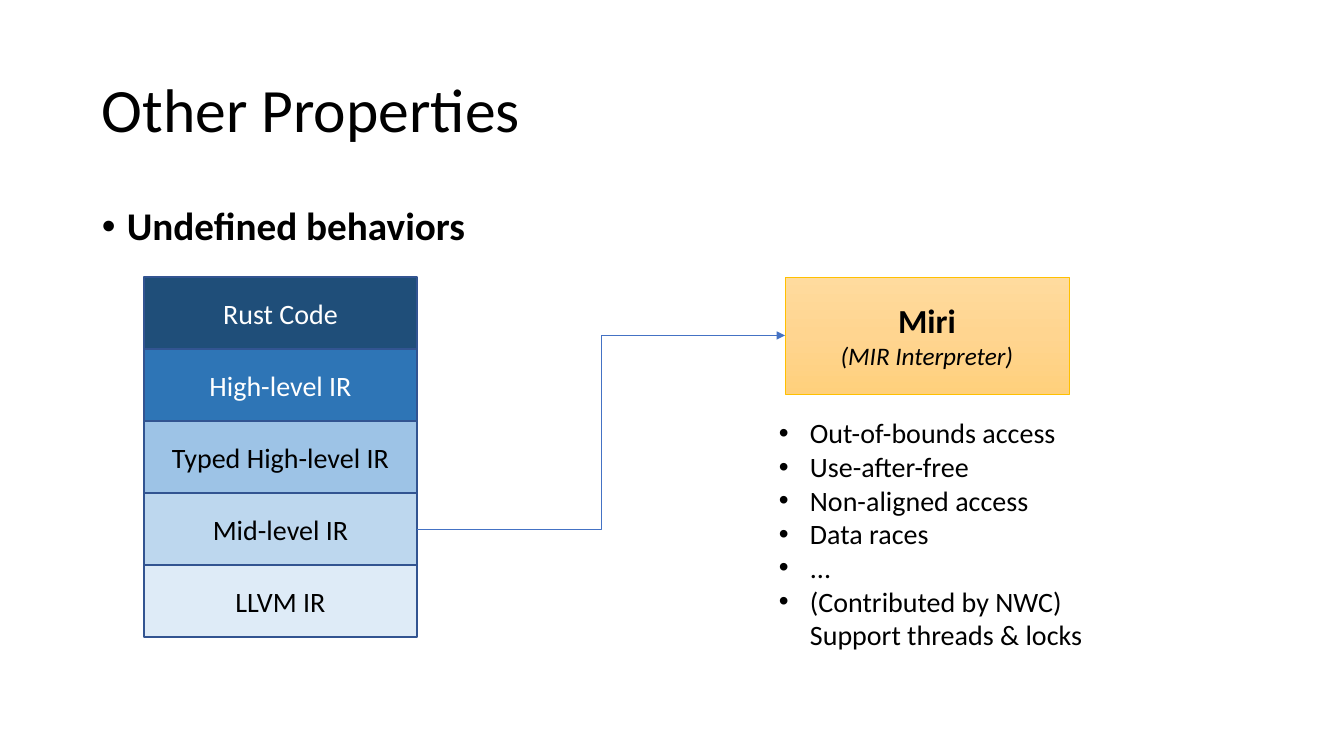
from copy import deepcopy

from lxml import etree
from pptx import Presentation
from pptx.dml.color import RGBColor
from pptx.enum.shapes import MSO_CONNECTOR, MSO_SHAPE
from pptx.enum.text import MSO_ANCHOR, MSO_AUTO_SIZE, PP_ALIGN
from pptx.oxml.ns import qn
from pptx.util import Pt

RECTANGLE = MSO_SHAPE.RECTANGLE
ELBOW = MSO_CONNECTOR.ELBOW
MIDDLE = MSO_ANCHOR.MIDDLE
CENTER = PP_ALIGN.CENTER
GROW = MSO_AUTO_SIZE.SHAPE_TO_FIT_TEXT

EMU_PER_PX = 12192000 / 1344
FONT = "Calibri"
BLACK = RGBColor(0x00, 0x00, 0x00)
WHITE = RGBColor(0xFF, 0xFF, 0xFF)
NAVY = RGBColor(0x1F, 0x4E, 0x79)
BLUE = RGBColor(0x2E, 0x75, 0xB6)
SKY = RGBColor(0x9D, 0xC3, 0xE6)
PALE = RGBColor(0xBD, 0xD7, 0xEE)
ICE = RGBColor(0xDE, 0xEB, 0xF7)
OUTLINE = RGBColor(0x32, 0x54, 0x91)
ARROW = RGBColor(0x44, 0x72, 0xC4)
GOLD = RGBColor(0xFF, 0xC0, 0x00)
MIRI_STOPS = [
    (0, RGBColor(0xFF, 0xDB, 0x9E)),
    (0.5, RGBColor(0xFF, 0xD5, 0x90)),
    (1, RGBColor(0xFF, 0xD0, 0x7C)),
]


def px(*lengths):
    return [round(length * EMU_PER_PX) for length in lengths]


def write(para, text, size, color=BLACK, bold=False, italic=False, indent=0):
    """Fill a paragraph; an indent in px makes it a bullet."""
    para.text = text
    if indent:
        hang = px(indent)[0]
        properties = para._p.get_or_add_pPr()
        properties.set("marL", str(hang))
        properties.set("indent", str(-hang))
        etree.SubElement(properties, qn("a:buFont"), typeface="Arial")
        etree.SubElement(properties, qn("a:buChar"), char="•")
    for span in para.runs:
        span.font.name = FONT
        span.font.size = Pt(size)
        span.font.bold = bold
        span.font.italic = italic
        span.font.color.rgb = color


deck = Presentation()
deck.slide_width, deck.slide_height = px(1344, 756)
page = deck.slides.add_slide(deck.slide_layouts[6])
shapes = page.shapes

# Title
title = shapes.add_textbox(*px(92, 40, 1159, 146)).text_frame
title.word_wrap = True
title.vertical_anchor = MIDDLE
write(title.paragraphs[0], "Other Properties", 44)
title.paragraphs[0].line_spacing = 0.9

# Topic
topic = shapes.add_textbox(*px(92, 202, 1159, 50)).text_frame
topic.word_wrap = True
write(topic.paragraphs[0], "Undefined behaviors", 28, bold=True, indent=25)
topic.paragraphs[0].line_spacing = 0.9

# Compiler stages
STAGES = [
    ("Rust Code", NAVY, WHITE),
    ("High-level IR", BLUE, WHITE),
    ("Typed High-level IR", SKY, BLACK),
    ("Mid-level IR", PALE, BLACK),
    ("LLVM IR", ICE, BLACK),
]
STAGE_HEIGHT = 72
stage_boxes = {}
for row, (name, fill, color) in enumerate(STAGES):
    top = 277 + row * STAGE_HEIGHT
    box = shapes.add_shape(RECTANGLE, *px(144, top, 273, STAGE_HEIGHT))
    box.shadow.inherit = False
    box.fill.solid()
    box.fill.fore_color.rgb = fill
    box.line.color.rgb = OUTLINE
    box.line.width = Pt(1)
    box.text_frame.vertical_anchor = MIDDLE
    write(box.text_frame.paragraphs[0], name, 20, color)
    box.text_frame.paragraphs[0].alignment = CENTER
    stage_boxes[name] = box

# Miri box with a three-stop gradient
miri = shapes.add_shape(RECTANGLE, *px(785, 277, 284, 117))
miri.shadow.inherit = False
miri.fill.gradient()
miri.fill.gradient_angle = 270
stop_list = miri._element.spPr.find(qn("a:gradFill")).find(qn("a:gsLst"))
stop_list.insert(1, deepcopy(stop_list[0]))
for stop, (position, color) in zip(miri.fill.gradient_stops, MIRI_STOPS):
    stop.position = position
    stop.color.rgb = color
miri.line.color.rgb = GOLD
miri.line.width = Pt(0.5)
frame = miri.text_frame
frame.vertical_anchor = MIDDLE
write(frame.paragraphs[0], "Miri", 24, bold=True)
write(frame.add_paragraph(), "(MIR Interpreter)", 18, italic=True)
for para in frame.paragraphs:
    para.alignment = CENTER

# Arrow from the mid-level IR to Miri
arrow = shapes.add_connector(ELBOW, *px(417, 529, 785, 335))
arrow.begin_connect(stage_boxes["Mid-level IR"], 3)
arrow.end_connect(miri, 1)
arrow.line.color.rgb = ARROW
arrow.line.width = Pt(0.5)
etree.SubElement(arrow.line._get_or_add_ln(), qn("a:tailEnd"), type="triangle")
etree.SubElement(arrow._element.spPr, qn("a:effectLst"))

# What Miri detects
FINDINGS = [
    "Out-of-bounds access",
    "Use-after-free",
    "Non-aligned access",
    "Data races",
    "...",
    "(Contributed by NWC)\nSupport threads & locks",
]
findings = shapes.add_textbox(*px(769, 411, 328, 248)).text_frame
findings.word_wrap = False
findings.auto_size = GROW
for number, finding in enumerate(FINDINGS):
    para = findings.add_paragraph() if number else findings.paragraphs[0]
    write(para, finding, 20, indent=31)

deck.save("out.pptx")
